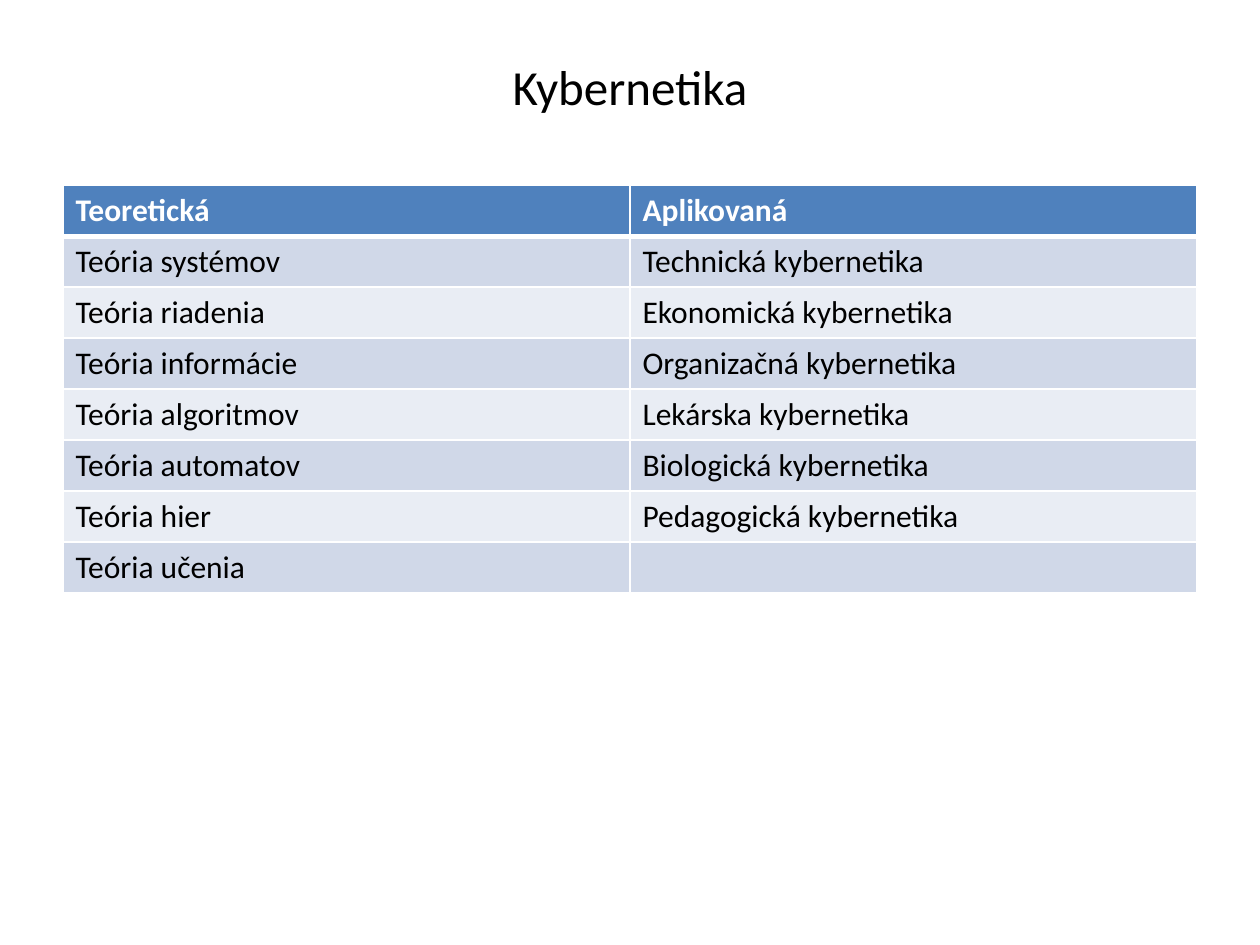
from lxml import etree
from pptx import Presentation, util as u
from pptx.dml.color import RGBColor
from pptx.enum import text
from pptx.oxml.ns import qn

COLORS = {
    "text": "000000",
    "white": "FFFFFF",
    "header": "4F81BD",
    "band_dark": "D0D8E8",
    "band_light": "E9EDF4",
}
ROWS = [
    ("Teoretická", "Aplikovaná"),
    ("Teória systémov", "Technická kybernetika"),
    ("Teória riadenia", "Ekonomická kybernetika"),
    ("Teória informácie", "Organizačná kybernetika"),
    ("Teória algoritmov", "Lekárska kybernetika"),
    ("Teória automatov", "Biologická kybernetika"),
    ("Teória hier", "Pedagogická kybernetika"),
    ("Teória učenia", ""),
]


def write(frame, words, size=18, color="text", bold=False, align=text.PP_ALIGN.LEFT):
    para = frame.paragraphs[0]
    para.alignment = align
    para.font.size = u.Pt(size)
    if not words:
        return
    span = para.add_run()
    span.text = words
    span.font.name = "Calibri"
    span.font.size = u.Pt(size)
    span.font.bold = bold
    span.font.color.rgb = RGBColor.from_string(COLORS[color])


def set_borders(cell, **widths):
    """Draw white borders; widths in points, keyed L, R, T, B in schema order."""
    props = cell._tc.get_or_add_tcPr()
    for place, (side, width) in enumerate(widths.items()):
        line = etree.Element(qn(f"a:ln{side}"), w=str(u.Pt(width)))
        fill = etree.SubElement(line, qn("a:solidFill"))
        etree.SubElement(fill, qn("a:srgbClr"), val=COLORS["white"])
        props.insert(place, line)


deck = Presentation()
deck.slide_width, deck.slide_height = u.Inches(10), u.Inches(7.5)
page = deck.slides.add_slide(deck.slide_layouts[6])

title = page.shapes.add_textbox(u.Inches(0.5), u.Inches(0.3), u.Inches(9), u.Inches(0.77))
title.text_frame.word_wrap = True
title.text_frame.vertical_anchor = text.MSO_ANCHOR.MIDDLE
write(title.text_frame, "Kybernetika", size=28, align=text.PP_ALIGN.CENTER)

table = page.shapes.add_table(
    len(ROWS), 2, u.Inches(0.5), u.Inches(1.47), u.Inches(9), u.Inches(3.24)
).table
for row, entries in enumerate(ROWS):
    is_header = row == 0
    band = "header" if is_header else "band_dark" if row % 2 else "band_light"
    for column, words in enumerate(entries):
        cell = table.cell(row, column)
        cell.fill.solid()
        cell.fill.fore_color.rgb = RGBColor.from_string(COLORS[band])
        set_borders(cell, L=1, R=1, T=3 if row == 1 else 1, B=3 if is_header else 1)
        write(cell.text_frame, words, color="white" if is_header else "text", bold=is_header)

deck.save("out.pptx")
